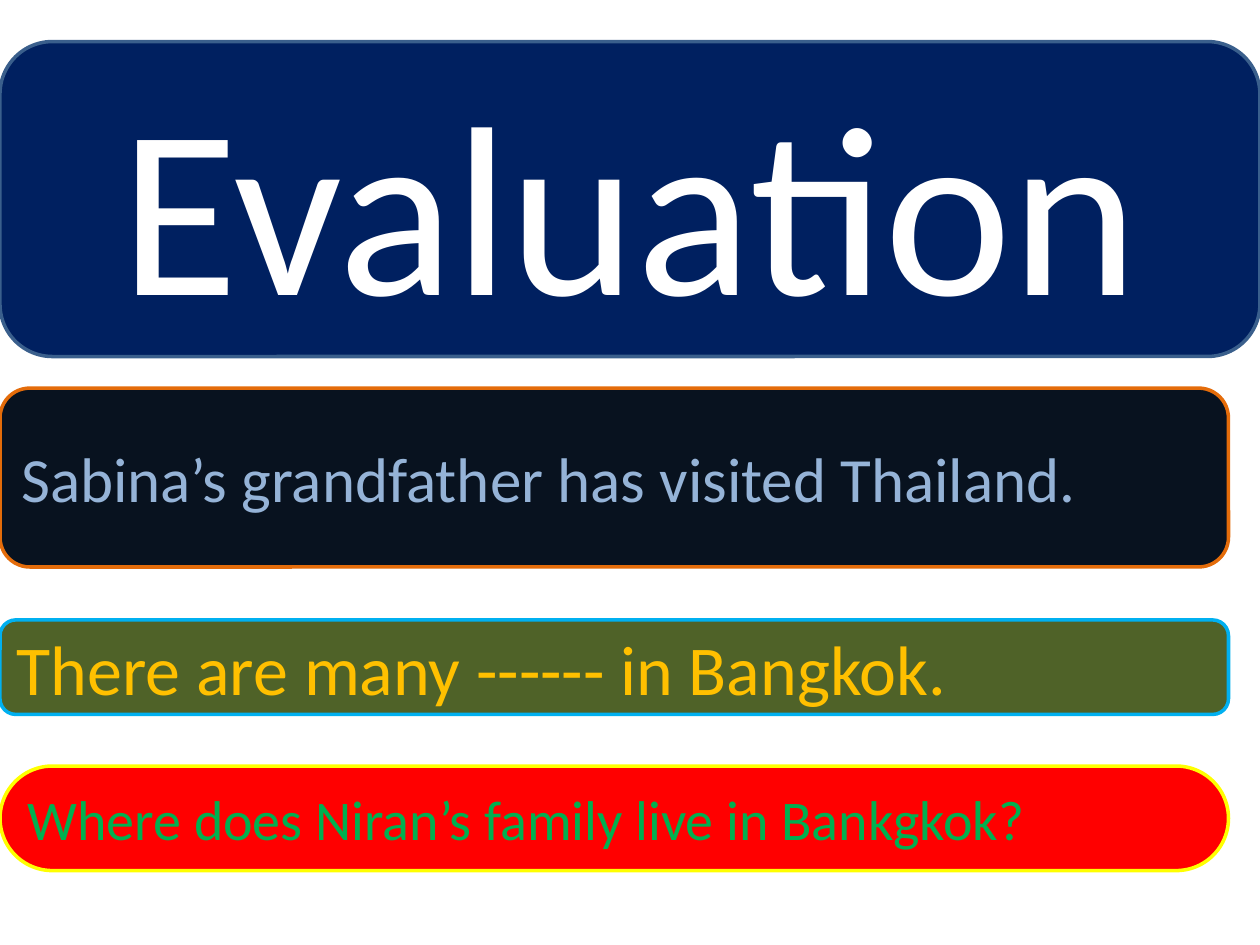
from pptx import Presentation
from pptx.dml.color import RGBColor
from pptx.enum.shapes import MSO_SHAPE
from pptx.enum.text import MSO_ANCHOR, PP_ALIGN
from pptx.util import Inches, Pt

ROUNDED = 0.16667
PILL = 0.5
BANNERS = [
    dict(text="Evaluation", top=0.33, width=10, height=2.5, corner=ROUNDED,
         fill="002060", line="3A5F8C", color="FFFFFF", size=138, align=PP_ALIGN.CENTER),
    dict(text="Sabina’s grandfather has visited Thailand.", top=3.08, width=9.75, height=1.42,
         corner=ROUNDED, fill="08121F", line="E46C0A", color="95B3D7", size=36,
         align=PP_ALIGN.LEFT),
    dict(text="There are many ------ in Bangkok.", top=4.92, width=9.75, height=0.75,
         corner=ROUNDED, fill="4F6228", line="00B0F0", color="FFC000", size=40,
         align=PP_ALIGN.LEFT),
    dict(text="Where does Niran’s family live in Bankgkok?", top=6.08, width=9.75, height=0.83,
         corner=PILL, fill="FF0000", line="FFFF00", color="00B050", size=32,
         align=PP_ALIGN.LEFT),
]


def rgb(value):
    return RGBColor.from_string(value)


def add_banner(slide, text, top, width, height, corner, fill, line, color, size, align):
    sp = slide.shapes.add_shape(MSO_SHAPE.ROUNDED_RECTANGLE, 0, Inches(top),
                                Inches(width), Inches(height))
    sp.adjustments[0] = corner
    sp.shadow.inherit = False
    sp.fill.solid()
    sp.fill.fore_color.rgb = rgb(fill)
    sp.line.color.rgb = rgb(line)
    sp.line.width = Pt(2)
    tf = sp.text_frame
    tf.word_wrap = True
    tf.vertical_anchor = MSO_ANCHOR.MIDDLE
    p = tf.paragraphs[0]
    p.text = text
    p.alignment = align
    font = p.runs[0].font
    font.name = "Calibri"
    font.size = Pt(size)
    font.color.rgb = rgb(color)


def main():
    prs = Presentation()
    prs.slide_width, prs.slide_height = Inches(10), Inches(7.5)
    slide = prs.slides.add_slide(prs.slide_layouts[6])
    for banner in BANNERS:
        add_banner(slide, **banner)
    prs.save("out.pptx")


if __name__ == "__main__":
    main()
